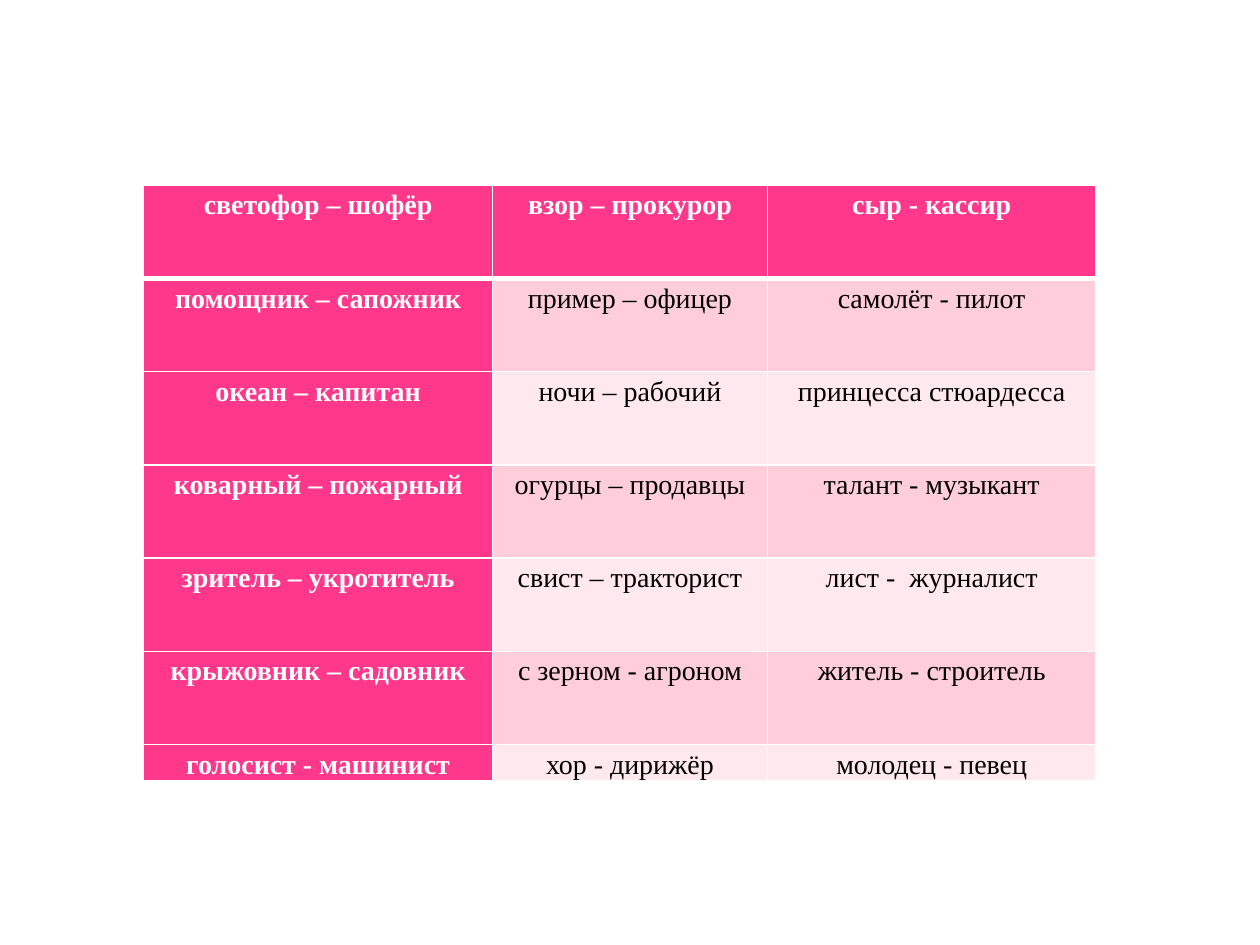
from dataclasses import dataclass

from lxml import etree
from pptx import Presentation, util as u
from pptx.dml import color
from pptx.enum import text
from pptx.oxml import ns

COLORS = {
    "accent": "FF388C",
    "band_dark": "FFCEDA",
    "band_light": "FFE8EE",
    "light_text": "FFFFFF",
    "dark_text": "000000",
    "border": "FFFFFF",
}
FONT = "Times New Roman"
LEFT, TOP = 1.14, 1.47
COLUMN_WIDTHS = [2.77, 2.18, 2.61]
FULL_ROW, LAST_ROW = 0.74, 0.28

RHYMES = [
    ("светофор – шофёр", "взор – прокурор", "сыр - кассир"),
    ("помощник – сапожник", "пример – офицер", "самолёт - пилот"),
    ("океан – капитан", "ночи – рабочий", "принцесса стюардесса"),
    ("коварный – пожарный", "огурцы – продавцы", "талант - музыкант"),
    ("зритель – укротитель", "свист – тракторист", "лист -  журналист"),
    ("крыжовник – садовник", "с зерном - агроном", "житель - строитель"),
    ("голосист - машинист", "хор - дирижёр", "молодец - певец"),
]


@dataclass(frozen=True)
class CellStyle:
    fill: str
    font: str
    bold: bool
    bottom_border: float = 1


def style_for(row: int, column: int) -> CellStyle:
    if row == 0:
        return CellStyle("accent", "light_text", True, 3)
    if column == 0:
        return CellStyle("accent", "light_text", True)
    return CellStyle("band_dark" if row % 2 else "band_light", "dark_text", False)


def rgb(name: str) -> color.RGBColor:
    return color.RGBColor.from_string(COLORS[name])


def add_borders(cell, top: float, bottom: float) -> None:
    properties = cell._tc.get_or_add_tcPr()
    widths = {"a:lnL": 1, "a:lnR": 1, "a:lnT": top, "a:lnB": bottom}
    for position, (tag, width) in enumerate(widths.items()):
        line = etree.Element(ns.qn(tag), w=str(u.Pt(width)))
        fill = etree.SubElement(line, ns.qn("a:solidFill"))
        etree.SubElement(fill, ns.qn("a:srgbClr"), val=COLORS["border"])
        properties.insert(position, line)


def fill_cell(cell, words: str, style: CellStyle, top_border: float) -> None:
    cell.margin_left = cell.margin_right = cell.margin_top = cell.margin_bottom = 0
    cell.fill.solid()
    cell.fill.fore_color.rgb = rgb(style.fill)
    add_borders(cell, top_border, style.bottom_border)
    cell.text_frame.text = words
    paragraph = cell.text_frame.paragraphs[0]
    paragraph.alignment = text.PP_ALIGN.CENTER
    paragraph.line_spacing = 1.15
    paragraph.space_after = u.Pt(10)
    font = paragraph.runs[0].font
    font.name = FONT
    font.size = u.Pt(16)
    font.bold = style.bold
    font.color.rgb = rgb(style.font)


def add_rhyme_table(slide) -> None:
    heights = [FULL_ROW] * (len(RHYMES) - 1) + [LAST_ROW]
    table = slide.shapes.add_table(
        len(RHYMES), len(COLUMN_WIDTHS), u.Inches(LEFT), u.Inches(TOP),
        u.Inches(sum(COLUMN_WIDTHS)), u.Inches(sum(heights)),
    ).table
    table.first_col = True
    for column, width in zip(table.columns, COLUMN_WIDTHS):
        column.width = u.Inches(width)
    for row, height in zip(table.rows, heights):
        row.height = u.Inches(height)
    for row, rhymes in enumerate(RHYMES):
        for column, words in enumerate(rhymes):
            top_border = style_for(row - 1, column).bottom_border if row else 1
            fill_cell(table.cell(row, column), words, style_for(row, column), top_border)


def main() -> None:
    presentation = Presentation()
    presentation.slide_width = u.Inches(10)
    presentation.slide_height = u.Inches(7.5)
    slide = presentation.slides.add_slide(presentation.slide_layouts[6])
    add_rhyme_table(slide)
    presentation.save("out.pptx")


if __name__ == "__main__":
    main()
